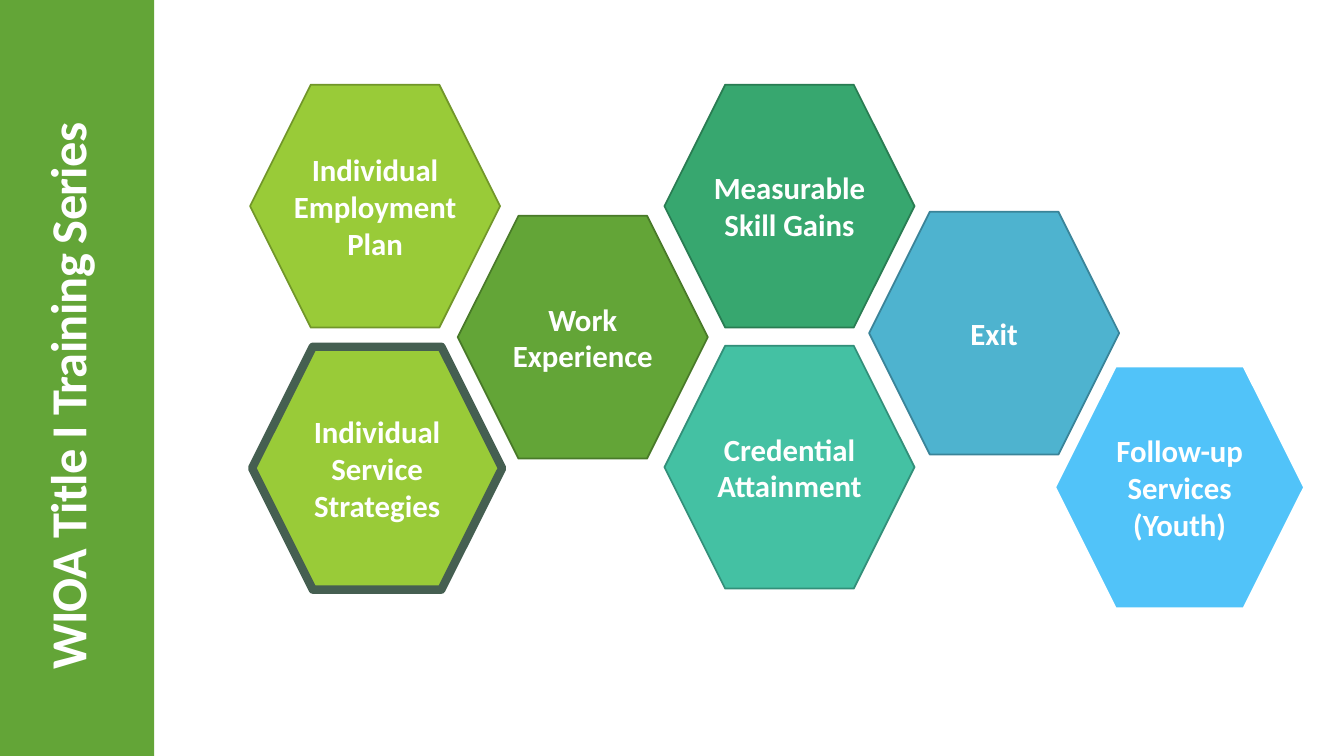
from pptx import Presentation
from pptx.dml.color import RGBColor
from pptx.enum.shapes import MSO_SHAPE
from pptx.enum.text import MSO_ANCHOR, PP_ALIGN
from pptx.util import Inches, Pt

RECT, HEXAGON = MSO_SHAPE.RECTANGLE, MSO_SHAPE.HEXAGON
MIDDLE, CENTER = MSO_ANCHOR.MIDDLE, PP_ALIGN.CENTER
FONT = "Calibri"
HEX_W, HEX_H = 2.48, 2.41
COLORS = {
    "white": "FFFFFF", "slate": "455F51",
    "lime": "99CB38", "lime_edge": "719629",
    "green": "63A537", "green_edge": "497A29",
    "emerald": "37A76F", "emerald_edge": "297C52",
    "teal": "44C1A3", "teal_edge": "328F79",
    "blue": "4EB3CF", "blue_edge": "3A8499",
    "sky": "51C3F9",
}
TOPICS = [
    ("Individual Employment Plan", 2.48, 0.84, "lime", "lime_edge", 1.25),
    ("Individual Service Strategies", 2.5, 3.44, "lime", "slate", 6),
    ("Work Experience", 4.54, 2.14, "green", "green_edge", 1.25),
    ("Measurable Skill Gains", 6.59, 0.84, "emerald", "emerald_edge", 1.25),
    ("Credential Attainment", 6.59, 3.43, "teal", "teal_edge", 1.25),
    ("Exit", 8.62, 2.1, "blue", "blue_edge", 1.25),
    ("Follow-up Services (Youth)", 10.46, 3.63, "sky", "white", 2),
]


def color(name):
    """Return the named colour."""
    return RGBColor.from_string(COLORS[name])


def write(tf, text, size):
    """Write one bold white paragraph, centred both ways."""
    tf.word_wrap = True
    tf.vertical_anchor = MIDDLE
    p = tf.paragraphs[0]
    p.text = text
    p.alignment = CENTER
    p.font.name = FONT
    p.font.size = Pt(size)
    p.font.bold = True
    p.font.color.rgb = color("white")
    return p


def add_filled(s, kind, x, y, w, h, fill):
    """Add a flat filled shape."""
    sp = s.shapes.add_shape(kind, Inches(x), Inches(y), Inches(w), Inches(h))
    sp.shadow.inherit = False
    sp.fill.solid()
    sp.fill.fore_color.rgb = color(fill)
    return sp


def add_sidebar(s, title):
    """Add the green band with its upward title."""
    band = add_filled(s, RECT, 0, 0, 1.53, 7.5, "green")
    band.line.fill.background()
    box = s.shapes.add_textbox(Inches(-2.21), Inches(2.16), Inches(5.83), Inches(3.54))
    box.rotation = 270
    p = write(box.text_frame, title, 36)
    p.line_spacing = 0.85
    p.runs[0].font._element.set("spc", "-50")


def add_topic(s, text, x, y, fill, edge, weight):
    """Add one labelled hexagon."""
    sp = add_filled(s, HEXAGON, x, y, HEX_W, HEX_H, fill)
    sp.line.color.rgb = color(edge)
    sp.line.width = Pt(weight)
    tf = sp.text_frame
    tf.margin_left = tf.margin_right = tf.margin_top = tf.margin_bottom = 0
    write(tf, text, 22)


def main():
    """Build and save the slide."""
    prs = Presentation()
    prs.slide_width, prs.slide_height = Inches(13.33), Inches(7.5)
    s = prs.slides.add_slide(prs.slide_layouts[6])
    add_sidebar(s, "WIOA Title I Training Series")
    for topic in TOPICS:
        add_topic(s, *topic)
    prs.save("out.pptx")


if __name__ == "__main__":
    main()
